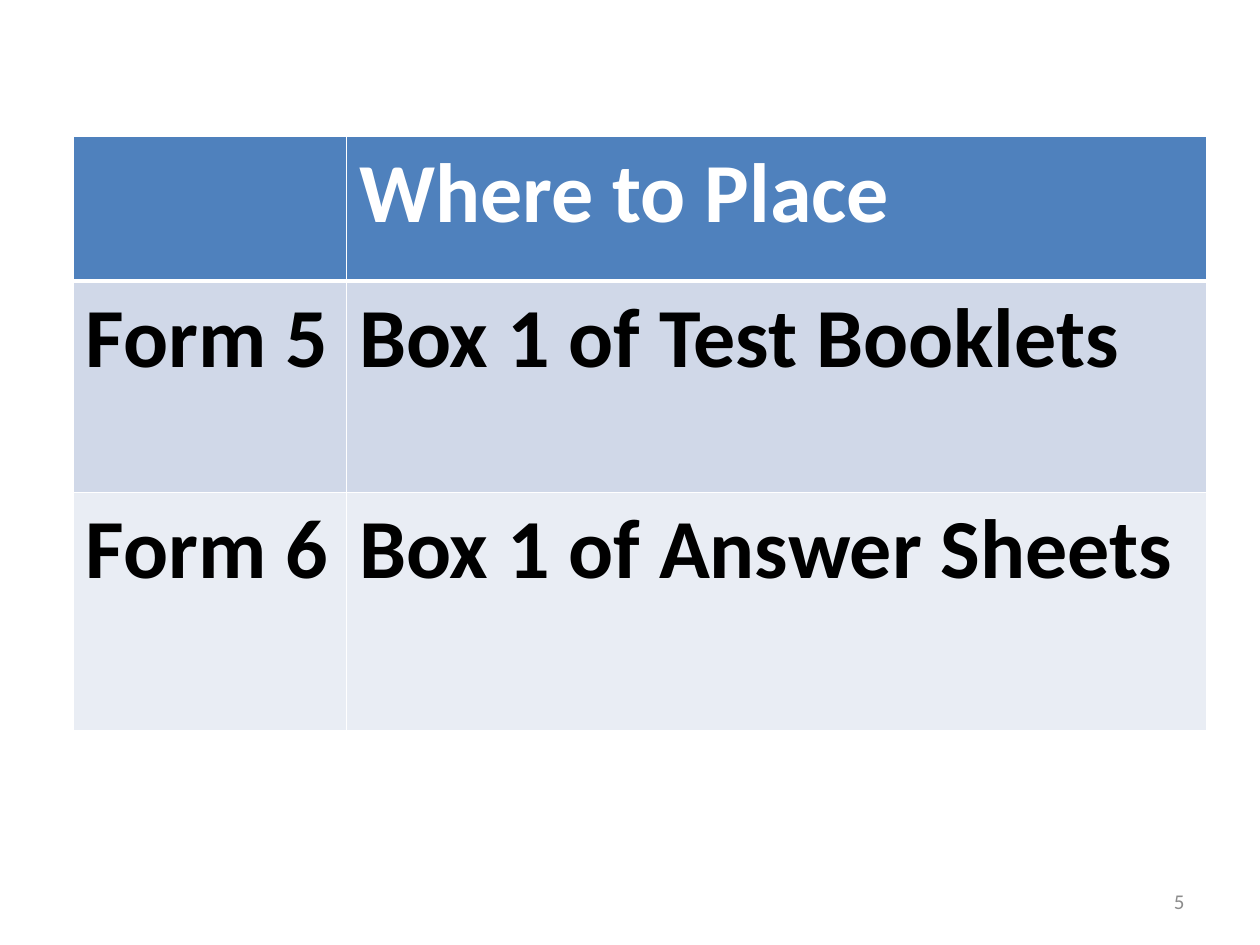
from lxml import etree
from pptx import Presentation
from pptx.dml.color import RGBColor
from pptx.enum.text import MSO_ANCHOR, PP_ALIGN
from pptx.oxml.ns import qn
from pptx.util import Inches, Pt

MIDDLE = MSO_ANCHOR.MIDDLE
RIGHT = PP_ALIGN.RIGHT
FONT = "Calibri"
SLIDE_WIDTH, SLIDE_HEIGHT = Inches(10), Inches(7.5)
COLORS = {
    "header": "4F81BD",
    "form_5": "D0D8E8",
    "form_6": "E9EDF4",
    "white": "FFFFFF",
    "black": "000000",
    "number": "8C8C8C",
}
COLUMN_SHARES = (2.17 / 9, 6.83 / 9)
ROWS = (
    (1.15 / 4.72, "header", "white", ("", "Where to Place")),
    (1.68 / 4.72, "form_5", "black", ("Form 5", "Box 1 of Test Booklets")),
    (1.89 / 4.72, "form_6", "black", ("Form 6", "Box 1 of Answer Sheets")),
)


def format_text(paragraph, size, color, bold=False):
    """Set the font of every run in a paragraph."""
    for run in paragraph.runs:
        run.font.name = FONT
        run.font.size = Pt(size)
        run.font.bold = bold
        run.font.color.rgb = RGBColor.from_string(COLORS[color])


def add_borders(cell, widths):
    """Draw white borders on a cell from widths keyed by side."""
    properties = cell._tc.get_or_add_tcPr()
    for side, width in widths.items():
        line = etree.SubElement(properties, qn(f"a:ln{side}"), w=str(Pt(width)))
        fill = etree.SubElement(line, qn("a:solidFill"))
        etree.SubElement(fill, qn("a:srgbClr"), val=COLORS["white"])


def add_placement_table(slide, left, top, width, height):
    """Place the table that tells which box each form goes in."""
    table = slide.shapes.add_table(
        len(ROWS), len(COLUMN_SHARES), left, top, width, height
    ).table
    for column, share in zip(table.columns, COLUMN_SHARES):
        column.width = round(width * share)
    for index, (share, fill, color, texts) in enumerate(ROWS):
        table.rows[index].height = round(height * share)
        top_width = 3 if index == 1 else 1
        bottom_width = 3 if index == 0 else 1
        for cell, text in zip(table.rows[index].cells, texts):
            add_borders(cell, {"L": 1, "R": 1, "T": top_width, "B": bottom_width})
            cell.fill.solid()
            cell.fill.fore_color.rgb = RGBColor.from_string(COLORS[fill])
            cell.text_frame.text = text
            format_text(cell.text_frame.paragraphs[0], 48, color, bold=True)


def add_slide_number(slide, left, top, width, height):
    """Place the slide number at the right of its box."""
    text_frame = slide.shapes.add_textbox(left, top, width, height).text_frame
    text_frame.word_wrap = True
    text_frame.vertical_anchor = MIDDLE
    text_frame.text = "5"
    paragraph = text_frame.paragraphs[0]
    paragraph.alignment = RIGHT
    format_text(paragraph, 12, "number")


def main():
    """Build the slide and save it."""
    presentation = Presentation()
    presentation.slide_width = SLIDE_WIDTH
    presentation.slide_height = SLIDE_HEIGHT
    slide = presentation.slides.add_slide(presentation.slide_layouts[6])
    add_placement_table(slide, Inches(0.58), Inches(1.08), Inches(9), Inches(4.72))
    add_slide_number(slide, Inches(7.17), Inches(6.95), Inches(2.33), Inches(0.4))
    presentation.save("out.pptx")


if __name__ == "__main__":
    main()
